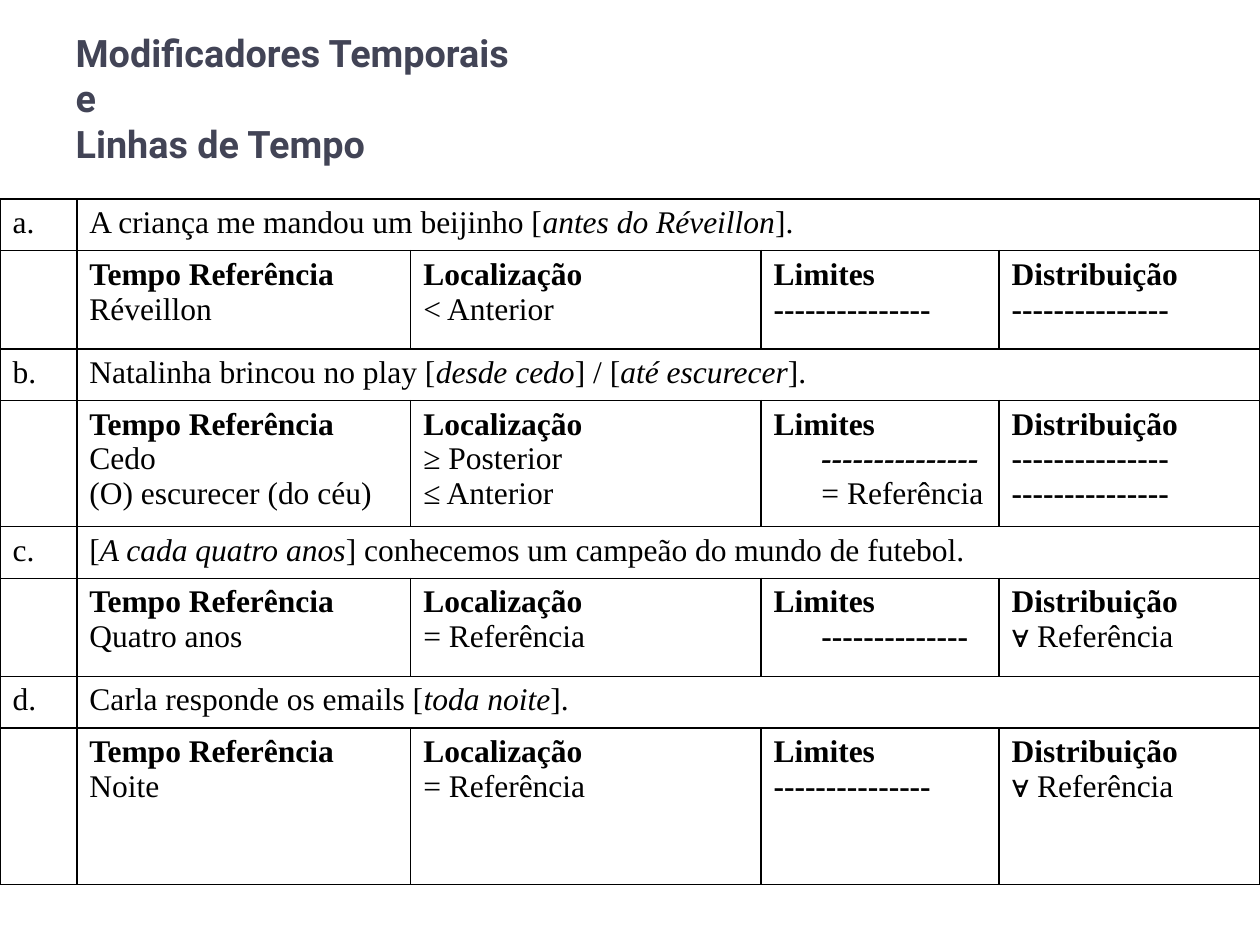
"""Build a slide that sets out temporal modifiers and their timelines in a table."""
from typing import Any, NamedTuple

from lxml import etree
from pptx import Presentation
from pptx import util as u
from pptx.dml.color import RGBColor
from pptx.enum import text
from pptx.oxml.ns import qn

COLORS = {"title": "424456", "text": "000000", "border": "000000"}
COLUMN_WIDTHS = [0.61, 2.65, 2.78, 1.89, 2.07]
SENTENCE_HEIGHT = 0.41
HANGING = 0.38
DASHES = "-" * 15


class Run(NamedTuple):
    text: str
    bold: bool = False
    italic: bool = False
    size: float = 18


class Line(NamedTuple):
    runs: list[Run]
    indented: bool = False


class Example(NamedTuple):
    label: str
    sentence: list[Run]
    height: float
    details: list[list[Line]]


def plain(content: str, indented: bool = False) -> Line:
    return Line([Run(content)], indented)


def strong(content: str, indented: bool = False, italic: bool = False) -> Line:
    return Line([Run(content, True, italic)], indented)


def sentence(marked: str) -> list[Run]:
    """Split a sentence into runs, with italics between asterisks."""
    return [Run(part, italic=index % 2 == 1) for index, part in enumerate(marked.split("*")) if part]


HEADINGS = ["Tempo Referência", "Localização ", "Limites", "Distribuição"]
EVERY_REFERENCE = Line([Run("∀", size=17), Run(" Referência")])
EXAMPLES = [
    Example("a.", sentence("A criança me mandou um beijinho [*antes do Réveillon*]."), 0.78,
            [[plain("Réveillon")], [plain("< Anterior")], [strong(DASHES)], [strong(DASHES)]]),
    Example("b.", sentence("Natalinha brincou no play [*desde cedo*] / [*até escurecer*]."), 1.0,
            [[plain("Cedo"), plain("(O) escurecer (do céu)")],
             [plain("≥ Posterior"), plain("≤ Anterior")],
             [strong(DASHES, True, True), plain("= Referência", True)],
             [strong(DASHES), strong(DASHES)]]),
    Example("c.", sentence("[*A cada quatro anos*] conhecemos um campeão do mundo de futebol."), 0.78,
            [[plain("Quatro anos")], [plain("= Referência")],
             [strong(DASHES[:-1], True)], [EVERY_REFERENCE]]),
    Example("d.", sentence("Carla responde os emails [*toda noite*]."), 1.24,
            [[plain("Noite")], [plain("= Referência")], [strong(DASHES)], [EVERY_REFERENCE]]),
]


def format_font(font: Any, color: str, **values: Any) -> None:
    for name, value in values.items():
        setattr(font, name, value)
    font.color.rgb = RGBColor.from_string(COLORS[color])


def write_cell(cell: Any, lines: list[Line]) -> None:
    """Write one justified paragraph per line."""
    frame = cell.text_frame
    for index, line in enumerate(lines):
        paragraph = frame.paragraphs[0] if index == 0 else frame.add_paragraph()
        paragraph.alignment = text.PP_ALIGN.JUSTIFY
        properties = paragraph._p.get_or_add_pPr()
        properties.set("marL", str(u.Inches(HANGING)))
        properties.set("indent", str(0 if line.indented else -u.Inches(HANGING)))
        for item in line.runs:
            run = paragraph.add_run()
            run.text = item.text
            format_font(run.font, "text", name="Times New Roman", size=u.Pt(item.size),
                        bold=item.bold, italic=item.italic)


def style_cell(cell: Any) -> None:
    """Give a cell thin borders and no fill."""
    properties = cell._tc.get_or_add_tcPr()
    for side in ("a:lnL", "a:lnR", "a:lnT", "a:lnB"):
        border = etree.SubElement(properties, qn(side), w=str(u.Pt(1)))
        fill = etree.SubElement(border, qn("a:solidFill"))
        etree.SubElement(fill, qn("a:srgbClr"), val=COLORS["border"])
    cell.fill.background()


def add_title(slide: Any) -> None:
    title = slide.shapes.title
    box = {"left": 0.5, "top": 0.3, "width": 9, "height": 0.95}
    for name, value in box.items():
        setattr(title, name, u.Inches(value))
    frame = title.text_frame
    frame.text = "Modificadores Temporais\ve \vLinhas de Tempo"
    frame.auto_size = text.MSO_AUTO_SIZE.NONE
    frame.vertical_anchor = text.MSO_ANCHOR.MIDDLE
    paragraph = frame.paragraphs[0]
    paragraph.alignment = text.PP_ALIGN.LEFT
    for run in paragraph.runs:
        format_font(run.font, "title", name="Roboto", size=u.Pt(21.6), bold=True)


def add_examples(slide: Any) -> None:
    heights = [height for example in EXAMPLES for height in (SENTENCE_HEIGHT, example.height)]
    table = slide.shapes.add_table(len(heights), len(COLUMN_WIDTHS), u.Inches(0), u.Inches(1.58),
                                   u.Inches(10), u.Inches(sum(heights))).table
    table.first_row = table.horz_banding = False
    for column, width in zip(table.columns, COLUMN_WIDTHS):
        column.width = u.Inches(width)
    for row, height in zip(table.rows, heights):
        row.height = u.Inches(height)
    for cell in table.iter_cells():
        style_cell(cell)
    for index, example in enumerate(EXAMPLES):
        row = 2 * index
        table.cell(row, 1).merge(table.cell(row, len(COLUMN_WIDTHS) - 1))
        write_cell(table.cell(row, 0), [plain(example.label)])
        write_cell(table.cell(row, 1), [Line(example.sentence)])
        for column, (heading, lines) in enumerate(zip(HEADINGS, example.details), start=1):
            write_cell(table.cell(row + 1, column), [strong(heading), *lines])


def main() -> None:
    presentation = Presentation()
    presentation.slide_width, presentation.slide_height = u.Inches(10), u.Inches(7.5)
    slide = presentation.slides.add_slide(presentation.slide_layouts[5])
    add_title(slide)
    add_examples(slide)
    presentation.save("out.pptx")


if __name__ == "__main__":
    main()
